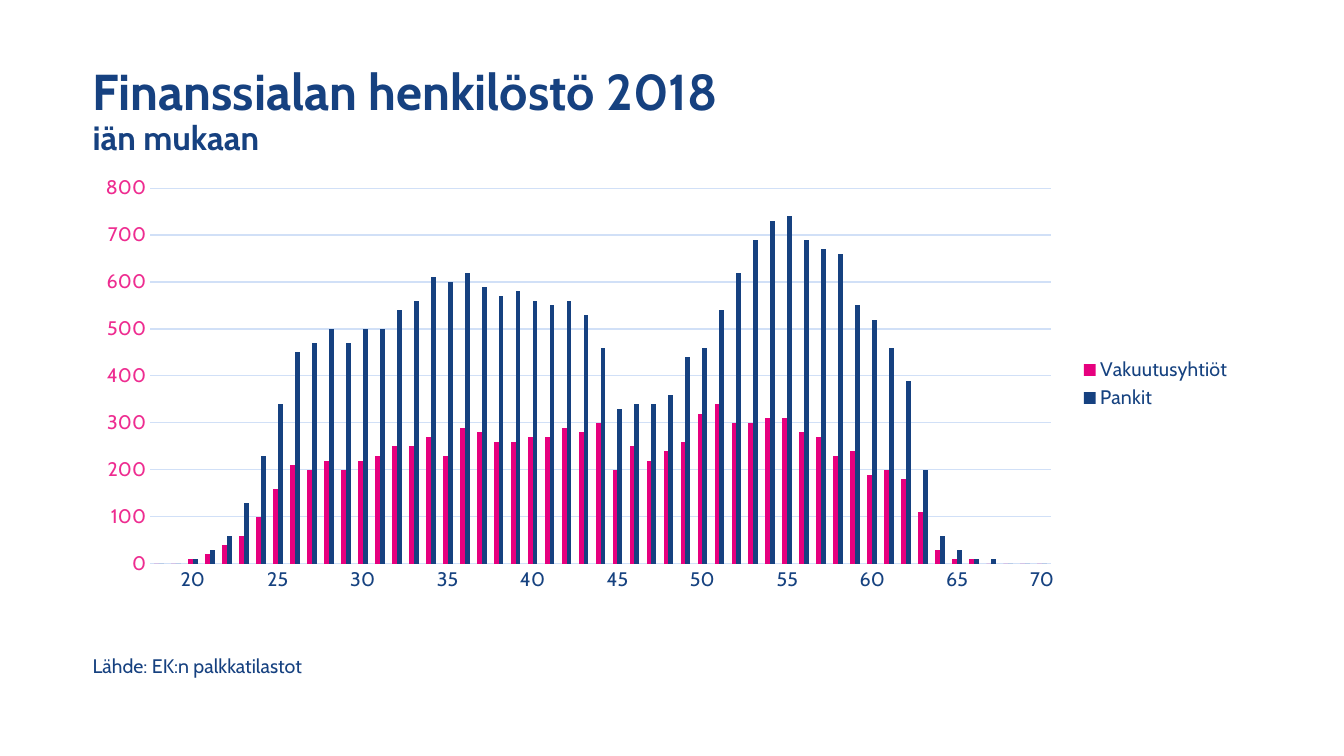
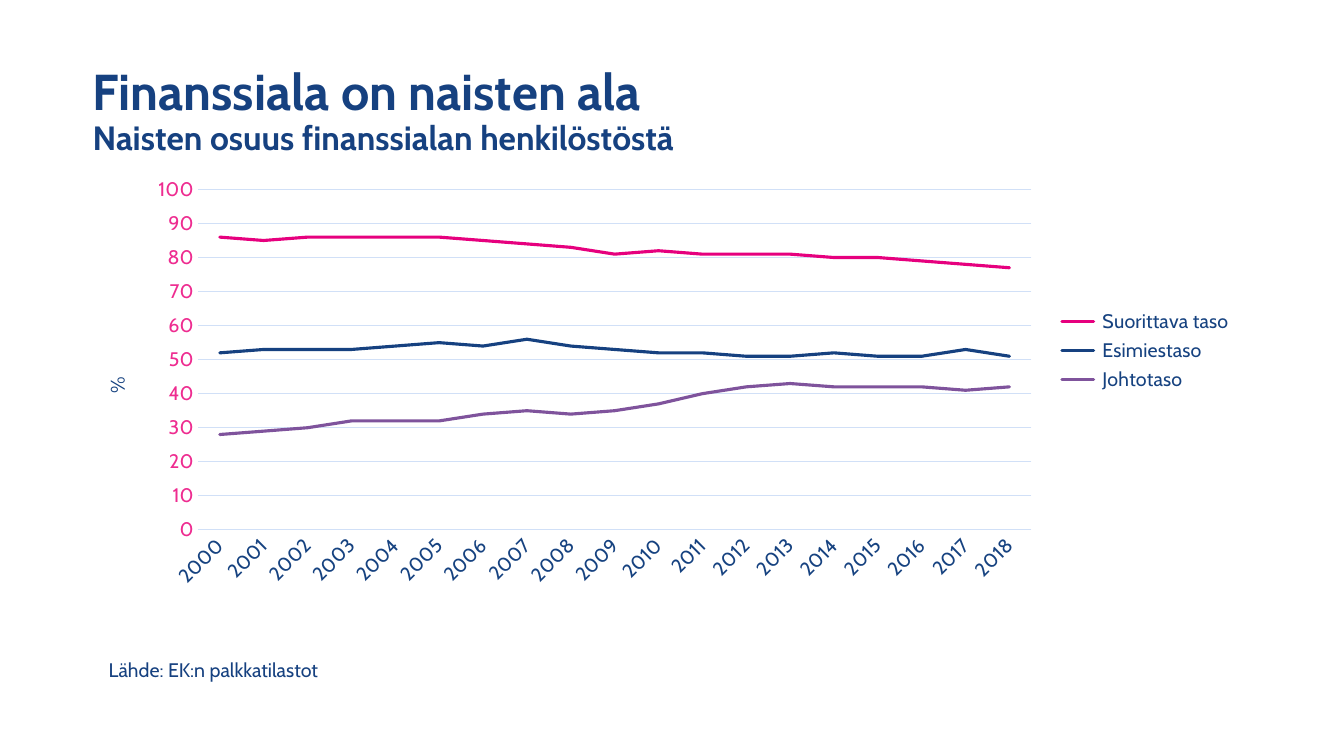
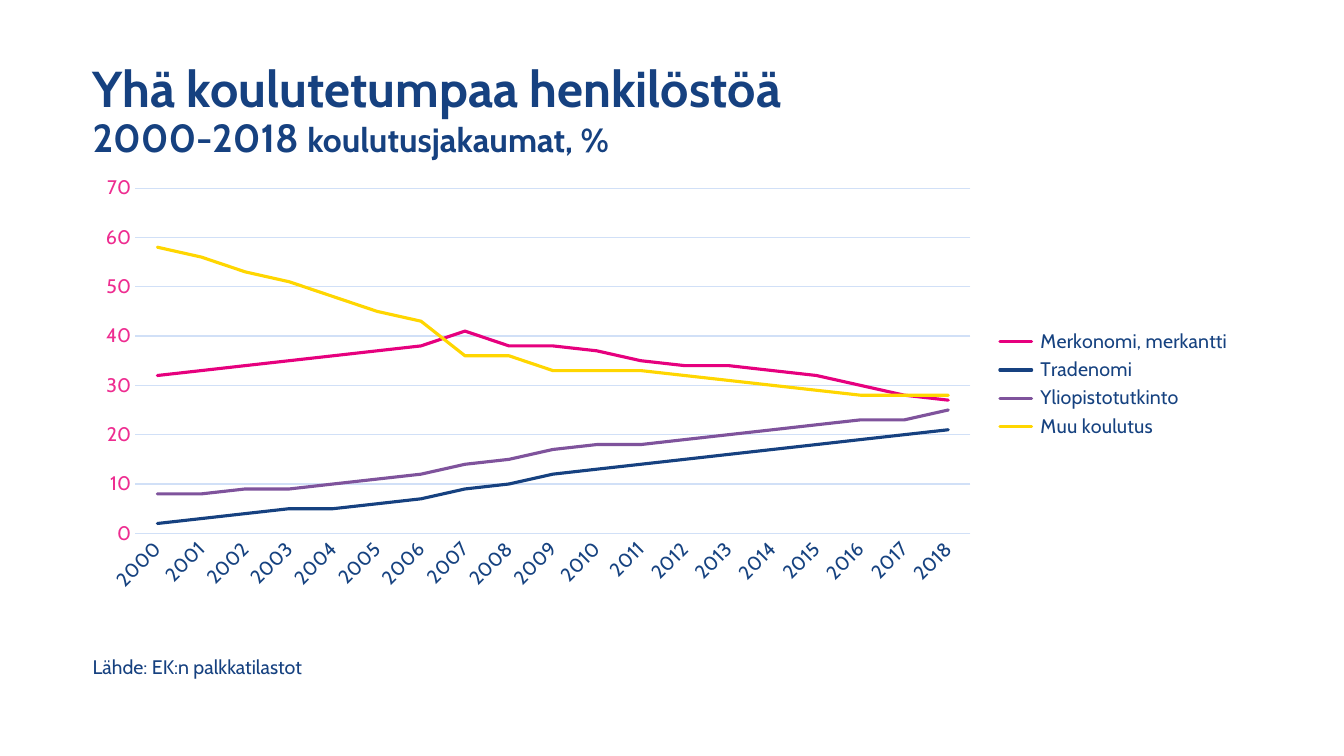
from lxml.etree import SubElement
from pptx import Presentation
from pptx.chart.data import CategoryChartData
from pptx.dml.color import RGBColor
from pptx.enum.chart import XL_CHART_TYPE, XL_LEGEND_POSITION, XL_TICK_MARK
from pptx.enum.text import MSO_ANCHOR
from pptx.oxml.ns import qn
from pptx.util import Inches, Pt

FACE = "Cabin"
NAVY, INK, PINK, ROSE = "164180", "164280", "E6007E", "EE2C90"
PLUM, GOLD, GRID = "7F539C", "FFD600", "D1E0F7"
HUES = [PINK, NAVY, PLUM, GOLD]
LEFT, TOP, WIDE, HIGH = 0.82, 1.66, 11.5, 4.3
AUTO = -1000
YEARS = [str(year) for year in range(2000, 2019)]
AGES = ["" if age % 5 else str(age) for age in range(18, 71)]

STAFF = {
    "Vakuutusyhtiöt": [
        0, 0, 10, 20, 40, 60, 100, 160, 210, 200, 220, 200, 220, 230, 250, 250, 270, 230,
        290, 280, 260, 260, 270, 270, 290, 280, 300, 200, 250, 220, 240, 260, 320, 340, 300,
        300, 310, 310, 280, 270, 230, 240, 190, 200, 180, 110, 30, 10, 10, 0, 0, 0, 0],
    "Pankit": [
        0, 0, 10, 30, 60, 130, 230, 340, 450, 470, 500, 470, 500, 500, 540, 560, 610, 600,
        620, 590, 570, 580, 560, 550, 560, 530, 460, 330, 340, 340, 360, 440, 460, 540, 620,
        690, 730, 740, 690, 670, 660, 550, 520, 460, 390, 200, 60, 30, 10, 10, 0, 0, 0],
}
WOMEN = {
    " Suorittava taso": [
        86, 85, 86, 86, 86, 86, 85, 84, 83, 81, 82, 81, 81, 81, 80, 80, 79, 78, 77],
    " Esimiestaso": [52, 53, 53, 53, 54, 55, 54, 56, 54, 53, 52, 52, 51, 51, 52, 51, 51, 53, 51],
    " Johtotaso": [28, 29, 30, 32, 32, 32, 34, 35, 34, 35, 37, 40, 42, 43, 42, 42, 42, 41, 42],
}
STUDY = {
    " Merkonomi, merkantti": [
        32, 33, 34, 35, 36, 37, 38, 41, 38, 38, 37, 35, 34, 34, 33, 32, 30, 28, 27],
    " Tradenomi": [2, 3, 4, 5, 5, 6, 7, 9, 10, 12, 13, 14, 15, 16, 17, 18, 19, 20, 21],
    " Yliopistotutkinto": [8, 8, 9, 9, 10, 11, 12, 14, 15, 17, 18, 18, 19, 20, 21, 22, 23, 23, 25],
    " Muu koulutus": [58, 56, 53, 51, 48, 45, 43, 36, 36, 33, 33, 33, 32, 31, 30, 29, 28, 28, 28],
}


def tint(code):
    """Turn a hex string into a colour."""
    return RGBColor.from_string(code)


def style(font, hue, size=14, bold=False):
    """Set face, size, weight and colour of a font."""
    font.name, font.size, font.bold = FACE, Pt(size), bold
    font.color.rgb = tint(hue)


def add_box(slide, left, top, wide, high):
    """Add a wrapping text box and return its frame."""
    box = slide.shapes.add_textbox(Inches(left), Inches(top), Inches(wide), Inches(high))
    box.text_frame.word_wrap = True
    return box.text_frame


def add_title(slide, head, parts):
    """Add the title with its smaller second line."""
    frame = add_box(slide, LEFT, 0.39, WIDE, 1.45)
    frame.vertical_anchor = MSO_ANCHOR.MIDDLE
    para = frame.paragraphs[0]
    para.line_spacing = 0.9
    style(para.font, NAVY, 36, True)
    para.add_run().text = head
    para.add_line_break()
    for text, size in parts:
        run = para.add_run()
        run.text, run.font.size = text, Pt(size)


def add_source(slide, left, top):
    """Add the source note below the chart."""
    para = add_box(slide, left, top, 3.29, 0.34).paragraphs[0]
    para.text = "Lähde: EK:n palkkatilastot"
    style(para.font, NAVY)


def pin(node, left, top, size=None):
    """Fix a chart part at a place given in slide inches."""
    layout = node.find(qn("c:layout"))
    if layout is None:
        layout = node.makeelement(qn("c:layout"), {})
        node.insert(0, layout)
    manual = SubElement(layout, qn("c:manualLayout"))
    rules = [("xMode", "edge"), ("yMode", "edge"),
             ("x", (left - LEFT) / WIDE), ("y", (top - TOP) / HIGH)]
    if size:
        rules += [("w", size[0] / WIDE), ("h", size[1] / HIGH)]
    for tag, val in rules:
        SubElement(manual, qn("c:" + tag)).set("val", str(val))


def turn(node, angle):
    """Rotate the text of a chart part by degrees."""
    body = next(node.iter(qn("a:bodyPr")))
    body.set("rot", str(angle * 60000))
    body.set("vert", "horz")


def style_axes(chart, peak, step):
    """Style both axes and the grid."""
    cat, val = chart.category_axis, chart.value_axis
    for axis, hue in ((cat, INK), (val, ROSE)):
        axis.major_tick_mark = axis.minor_tick_mark = XL_TICK_MARK.NONE
        style(axis.tick_labels.font, hue)
        turn(axis._element.find(qn("c:txPr")), AUTO)
    val.minimum_scale, val.maximum_scale, val.major_unit = 0, peak, step
    val.tick_labels.number_format = "0"
    val.tick_labels.number_format_is_linked = False
    val.format.line.fill.background()
    for line in (cat.format.line, val.major_gridlines.format.line):
        line.color.rgb, line.width = tint(GRID), Pt(0.75)


def add_unit(chart, text, left, top):
    """Name the unit beside the value axis."""
    title = chart.value_axis.axis_title
    title.text_frame.text = text
    style(title.text_frame.paragraphs[0].font, INK)
    turn(title._element, -90)
    pin(title._element, left, top)


def draw_line(row, hue):
    """Give a line series its colour and round ends."""
    row.smooth = False
    row.format.line.color.rgb, row.format.line.width = tint(hue), Pt(2.25)
    next(row._element.iter(qn("a:ln"))).set("cap", "rnd")


def add_graph(slide, kind, cats, rows, peak, step):
    """Add a chart with its series, axes and legend."""
    data = CategoryChartData(number_format="0")
    data.categories = cats
    for name, vals in rows.items():
        data.add_series(name, vals)
    chart = slide.shapes.add_chart(
        kind, Inches(LEFT), Inches(TOP), Inches(WIDE), Inches(HIGH), data).chart
    style(chart.font, INK)
    chart.has_title = False
    chart.has_legend = True
    chart.legend.position = XL_LEGEND_POSITION.RIGHT
    chart.legend.include_in_layout = False
    style(chart.legend.font, INK)
    plot = chart.plots[0]
    plot.vary_by_categories = False
    for row, hue in zip(plot.series, HUES):
        if kind == XL_CHART_TYPE.LINE:
            draw_line(row, hue)
        else:
            plot.gap_width = 150
            row.format.fill.solid()
            row.format.fill.fore_color.rgb = tint(hue)
    style_axes(chart, peak, step)
    return chart


def main():
    """Build and save the deck."""
    deck = Presentation()
    deck.slide_width, deck.slide_height = Inches(13.33), Inches(7.5)
    ages, women, study = [deck.slides.add_slide(deck.slide_layouts[6]) for _ in range(3)]
    bars, line = XL_CHART_TYPE.COLUMN_CLUSTERED, XL_CHART_TYPE.LINE

    add_title(ages, "Finanssialan henkilöstö 2018", [("iän mukaan", 24)])
    add_graph(ages, bars, AGES, STAFF, 800, 100)
    add_source(ages, LEFT, 6.44)

    add_title(women, "Finanssiala on naisten ala",
              [("Naisten osuus finanssialan henkilöstöstä", 24)])
    chart = add_graph(women, line, YEARS, WOMEN, 100, 10)
    add_unit(chart, "%", 0.99, 3.7)
    pin(next(chart._chartSpace.iter(qn("c:plotArea"))), 1.57, 1.76, (8.66, 4.08))
    pin(chart.legend._element, 10.48, 3.02, (1.76, 0.92))
    add_source(women, 0.98, 6.48)

    add_title(study, "Yhä koulutetumpaa henkilöstöä",
              [("2000-2018 ", 28), ("koulutusjakaumat, %", 24)])
    add_graph(study, line, YEARS, STUDY, 70, 10)
    add_source(study, LEFT, 6.45)

    deck.save("out.pptx")


if __name__ == "__main__":
    main()
